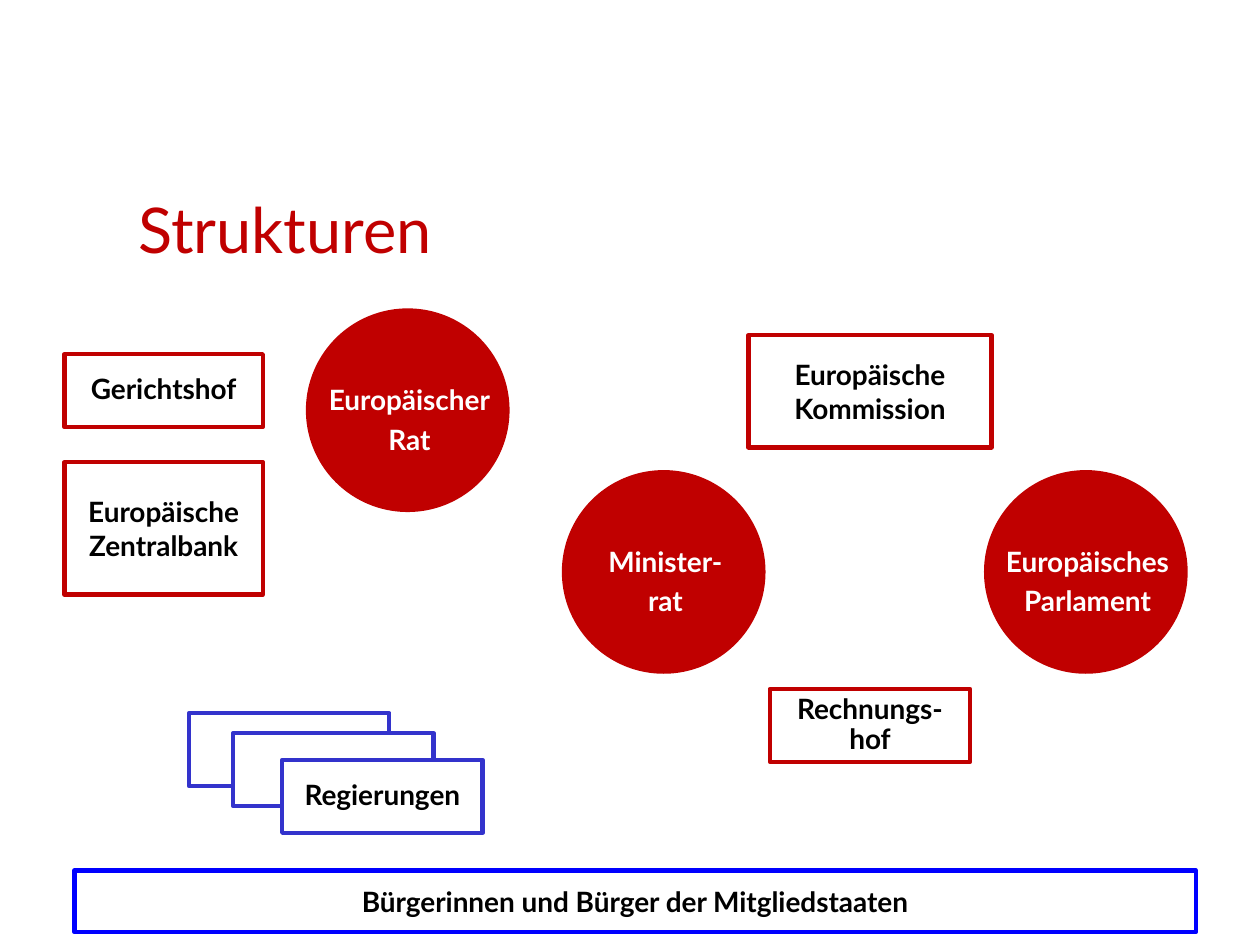
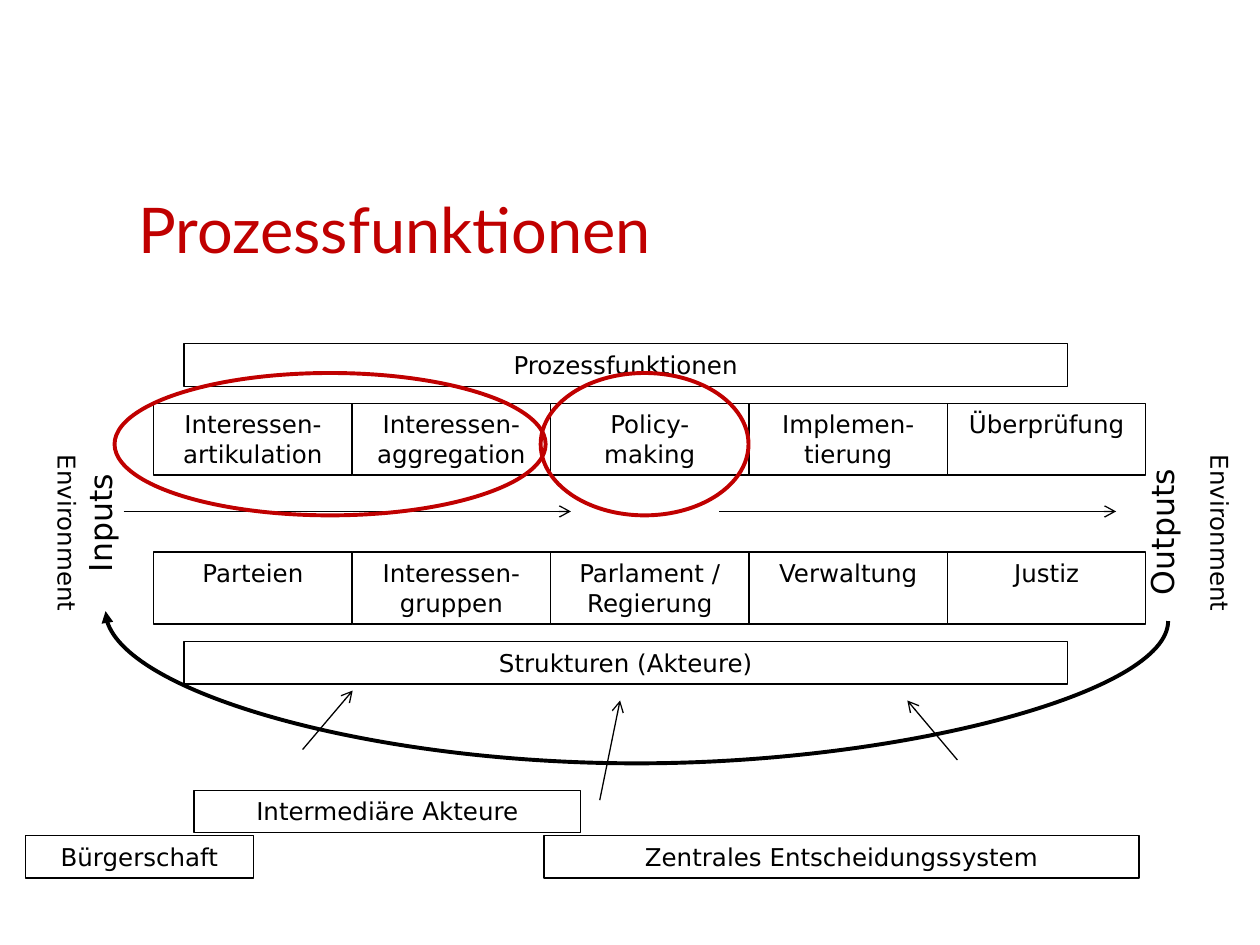
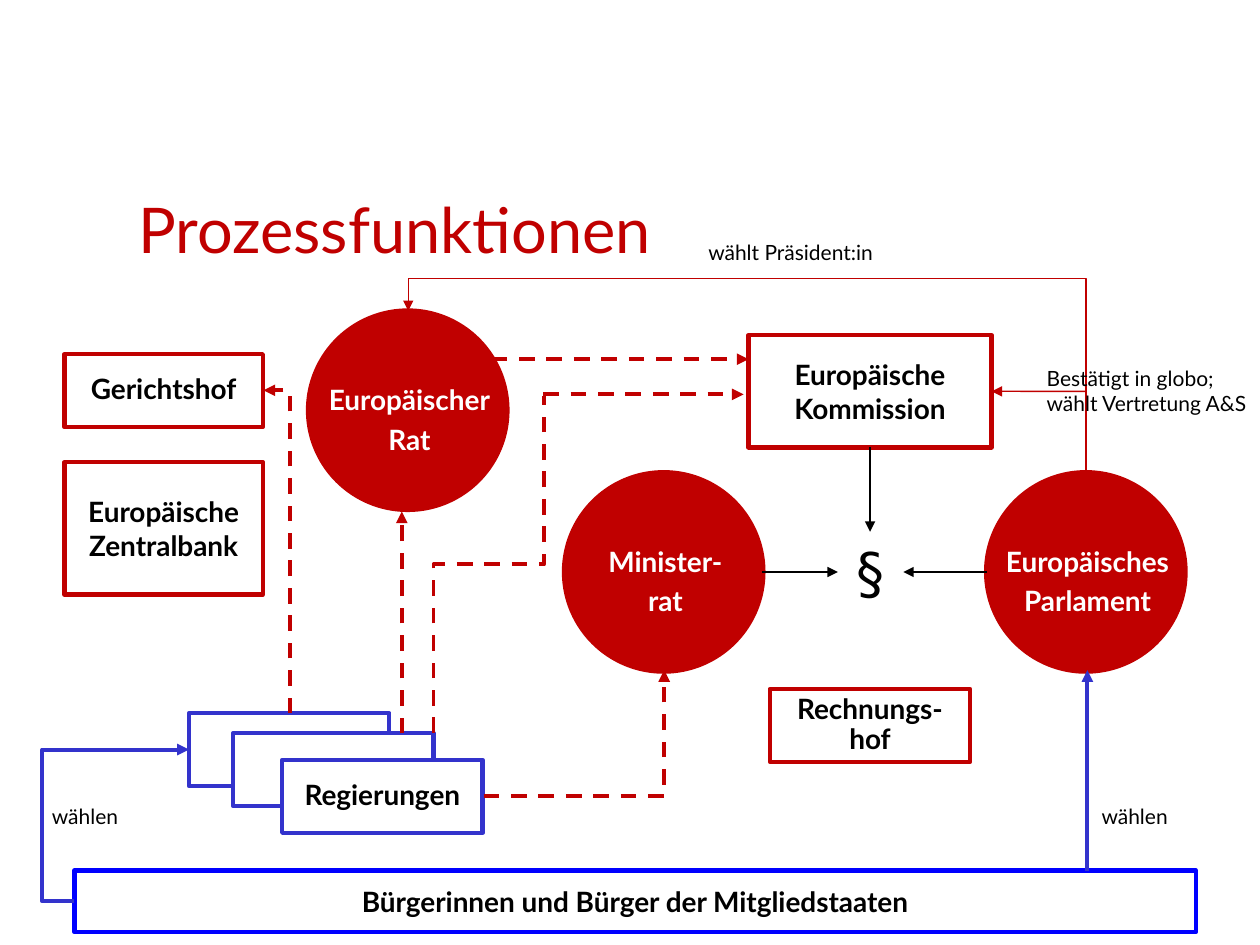
from dataclasses import dataclass

from pptx import Presentation
from pptx.dml.color import RGBColor
from pptx.enum.dml import MSO_LINE
from pptx.enum.shapes import MSO_CONNECTOR as Link, MSO_SHAPE as Preset
from pptx.enum.text import MSO_ANCHOR as Anchor, PP_ALIGN as Align
from pptx.oxml import parse_xml
from pptx.oxml.ns import nsdecls, qn
from pptx.shapes.autoshape import Shape
from pptx.shapes.connector import Connector
from pptx.slide import Slide
from pptx.util import Cm, Pt

RED, BLUE, PURE_BLUE = "C00000", "3333CC", "0000FF"
BLACK, WHITE = "000000", "FFFFFF"
LATO, DEJAVU = "Lato", "DejaVu Sans"
CIRCLE = 4.0  # diameter of an institution's circle, cm
Point = tuple[float, float]


# Descriptions of the repeated elements, lengths in cm
@dataclass
class Box:
    x: float
    y: float
    w: float
    h: float
    text: str = ""
    line: str = BLACK
    spacing: float = 1.0
    fill: str | None = None


@dataclass
class Circle:
    x: float
    y: float
    text: str


@dataclass
class Note:
    x: float
    y: float
    w: float
    h: float
    text: str
    size: float = 12
    font: str = LATO
    align: Align = Align.CENTER
    vert: str | None = None  # direction of text in a box turned upside down


@dataclass
class Arrow:
    start: Point
    end: Point
    color: str = BLACK
    width: float = 0.75
    dashed: bool = False
    head: str | None = "triangle"


@dataclass
class Bend:
    arrow: Arrow
    preset: str
    turn: int = 0
    adj: float | None = None


# Formatting helpers
def rgb(value: str) -> RGBColor:
    return RGBColor.from_string(value)


def write(s: Shape, text: str, *, size: float, font: str = LATO, color: str = BLACK,
          bold: bool = False, align: Align = Align.CENTER, anchor: Anchor = Anchor.TOP,
          spacing: float = 1.0, before: float = 0) -> None:
    tf = s.text_frame
    tf.word_wrap = True
    tf.vertical_anchor = anchor
    for i, line in enumerate(text.split("\n")):
        p = tf.add_paragraph() if i else tf.paragraphs[0]
        p.text = line
        p.alignment = align
        p.line_spacing = spacing
        if i and before:
            p.space_before = Pt(before)
        for r in p.runs:
            r.font.name, r.font.size, r.font.bold = font, Pt(size), bold
            r.font.color.rgb = rgb(color)


def add_outline(slide: Slide, preset: Preset, x: float, y: float, w: float, h: float,
                line: str, width: float, fill: str | None = None) -> Shape:
    s = slide.shapes.add_shape(preset, Cm(x), Cm(y), Cm(w), Cm(h))
    s.shadow.inherit = False
    if fill:
        s.fill.solid()
        s.fill.fore_color.rgb = rgb(fill)
    else:
        s.fill.background()
    s.line.color.rgb = rgb(line)
    s.line.width = Pt(width)
    return s


def add_institution(slide: Slide, b: Box) -> Shape:
    s = add_outline(slide, Preset.RECTANGLE, b.x, b.y, b.w, b.h, b.line, 2.5, b.fill)
    if b.text:
        write(s, b.text, size=16, bold=True, anchor=Anchor.MIDDLE, spacing=b.spacing)
    return s


def add_cell(slide: Slide, b: Box) -> None:
    s = add_outline(slide, Preset.RECTANGLE, b.x, b.y, b.w, b.h, b.line, 0.75)
    write(s, b.text, size=14, font=DEJAVU)


def add_circle(slide: Slide, c: Circle) -> None:
    add_outline(slide, Preset.OVAL, c.x, c.y, CIRCLE, CIRCLE, RED, 3, RED)
    label = slide.shapes.add_textbox(Cm(c.x - 1.14), Cm(c.y + 1.45), Cm(6.35), Cm(1.47))
    write(label, c.text, size=16, color=WHITE, bold=True, anchor=Anchor.MIDDLE, before=3.2)


def add_note(slide: Slide, n: Note) -> None:
    s = slide.shapes.add_textbox(Cm(n.x), Cm(n.y), Cm(n.w), Cm(n.h))
    write(s, n.text, size=n.size, font=n.font, align=n.align)
    if n.vert:
        s.rotation = 180
        s.text_frame._txBody.bodyPr.set("vert", n.vert)


def style_line(c: Connector, a: Arrow) -> None:
    c.line.color.rgb = rgb(a.color)
    c.line.width = Pt(a.width)
    if a.dashed:
        c.line.dash_style = MSO_LINE.DASH
    if a.head:
        ln = c.line._get_or_add_ln()
        ln.append(parse_xml(f'<a:tailEnd {nsdecls("a")} type="{a.head}"/>'))
    c.element.spPr.append(parse_xml(f'<a:effectLst {nsdecls("a")}/>'))


def add_arrow(slide: Slide, a: Arrow) -> Connector:
    c = slide.shapes.add_connector(Link.STRAIGHT, *map(Cm, a.start + a.end))
    style_line(c, a)
    return c


def add_bend(slide: Slide, b: Bend) -> None:
    """Draw an elbow or curve whose frame is turned in quarter steps."""
    (x1, y1), (x2, y2) = b.arrow.start, b.arrow.end
    dx, dy = x2 - x1, y2 - y1
    along, across = {0: (dx, dy), 90: (dy, -dx), 180: (-dx, -dy), 270: (-dy, dx)}[b.turn]
    w, h = abs(along), abs(across)
    x, y = (x1 + x2 - w) / 2, (y1 + y2 - h) / 2
    c = slide.shapes.add_connector(Link.ELBOW, Cm(x), Cm(y), Cm(x + w), Cm(y + h))
    xfrm = c.element.spPr.find(qn("a:xfrm"))
    xfrm.set("rot", str(b.turn * 60000))
    xfrm.set("flipH", str(int(along < 0)))
    xfrm.set("flipV", str(int(across < 0)))
    geom = c.element.spPr.find(qn("a:prstGeom"))
    geom.set("prst", b.preset)
    if b.adj is not None:
        geom.get_or_add_avLst().append(parse_xml(
            f'<a:gd {nsdecls("a")} name="adj1" fmla="val {round(b.adj * 100000)}"/>'))
    style_line(c, b.arrow)


def add_slide(prs: Presentation, title: str) -> Slide:
    slide = prs.slides.add_slide(prs.slide_layouts[5])
    s = slide.shapes.title
    s.left, s.top, s.width, s.height = Cm(2.54), Cm(2.31), Cm(20.32), Cm(3.18)
    write(s, title, size=36, color=RED, align=Align.LEFT, anchor=Anchor.BOTTOM)
    return slide


# Institutions of the union, shared by two slides
COMMISSION = Box(15.09, 6.76, 4.9, 2.26, "Europäische Kommission", RED)
INSTITUTIONS = [
    Box(1.3, 7.14, 4, 1.47, "Gerichtshof", RED, 0.9),
    Box(15.52, 13.89, 4.04, 1.47, "Rechnungs-hof", RED, 0.9),
    Box(1.3, 9.32, 4, 2.67, "Europäische Zentralbank", RED),
    Box(1.5, 17.55, 22.61, 1.24, "Bürgerinnen und Bürger der Mitgliedstaaten", PURE_BLUE),
    Box(3.81, 14.38, 4.04, 1.47, line=BLUE),
    Box(4.7, 14.78, 4.04, 1.47, line=BLUE, fill=WHITE),
    Box(5.69, 15.32, 4.04, 1.47, "Regierungen", BLUE, 0.9, WHITE),
]
CIRCLES = [
    Circle(6.22, 6.27, "Europäischer\nRat"),
    Circle(11.38, 9.53, "Minister-\nrat"),
    Circle(19.89, 9.53, "Europäisches\nParlament"),
]


def add_structure(slide: Slide) -> Shape:
    """Draw all institutions and return the commission's box."""
    for circle in CIRCLES:
        add_circle(slide, circle)
    for box in INSTITUTIONS:
        add_institution(slide, box)
    return add_institution(slide, COMMISSION)


# Process functions and the actors who fulfil them
CELL_X, CELL_W, CELL_H = 3.1, 4.0, 1.45
CELL_ROWS = {
    8.13: ["Interessen-artikulation", "Interessen-aggregation", "Policy-\vmaking",
           "Implemen-tierung", "Überprüfung"],
    11.13: ["Parteien", "Interessen-gruppen", "Parlament / Regierung",
            "Verwaltung", "Justiz"],
}
BARS = [
    Box(3.71, 6.93, 17.81, 0.86, "Prozessfunktionen"),
    Box(3.71, 12.93, 17.81, 0.86, "Strukturen (Akteure)"),
    Box(0.51, 16.84, 4.6, 0.86, "Bürgerschaft"),
    Box(3.91, 15.93, 7.8, 0.86, "Intermediäre Akteure"),
    Box(10.97, 16.84, 11.99, 0.86, "Zentrales Entscheidungssystem"),
]
SIDE_NOTES = [
    Note(22.91, 8.92, 1.27, 3.61, "Outputs", 18, DEJAVU, vert="vert"),
    Note(1.5, 8.74, 1.27, 3.61, "Inputs", 18, DEJAVU, vert="vert"),
    Note(0.66, 8.74, 1.12, 4.01, "Environment", 14, DEJAVU, vert="vert270"),
    Note(23.9, 8.74, 1.12, 4.01, "Environment", 14, DEJAVU, vert="vert270"),
]
FLOW_ARROWS = [
    Arrow((2.49, 10.31), (11.51, 10.31), head="arrow"),
    Arrow((14.5, 10.31), (22.5, 10.31), head="arrow"),
    Arrow((19.3, 15.32), (18.29, 14.12), head="arrow"),
    Arrow((12.09, 16.13), (12.5, 14.12), head="arrow"),
    Arrow((6.1, 15.11), (7.11, 13.92), head="arrow"),
]
FEEDBACK = Bend(Arrow((23.55, 12.52), (2.13, 12.32), width=2.25),
                "curvedConnector3", 90, -14.34)


def add_process(slide: Slide) -> None:
    add_bend(slide, FEEDBACK)
    for note in SIDE_NOTES:
        add_note(slide, note)
    for y, texts in CELL_ROWS.items():
        for i, text in enumerate(texts):
            add_cell(slide, Box(CELL_X + i * CELL_W, y, CELL_W, CELL_H, text))
    for bar in BARS:
        add_cell(slide, bar)
    for arrow in FLOW_ARROWS:
        add_arrow(slide, arrow)
    for x, w in [(2.31, 8.69), (10.9, 4.19)]:
        add_outline(slide, Preset.OVAL, x, 7.52, w, 2.87, RED, 2.25)


# Relations between the institutions
BENDS = [
    Bend(Arrow((1.5, 18.17), (3.81, 15.11), BLUE, 2.25), "bentConnector3", 180, -0.28),
    Bend(Arrow((21.89, 9.53), (8.23, 6.27), RED), "bentConnector3", 270, 1.2),
    Bend(Arrow((9.75, 16.05), (13.39, 13.51), RED, 2.25, True), "bentConnector2"),
    Bend(Arrow((8.74, 14.78), (10.97, 7.98), RED, 2.25, True, None),
         "bentConnector3", 90, 0.5),
    Bend(Arrow((5.84, 14.38), (5.31, 7.87), RED, 2.25, True), "bentConnector2", 270),
]
ARROWS = [
    Arrow((8.1, 14.78), (8.1, 10.31), RED, 2.25, True),
    Arrow((10.95, 7.95), (14.99, 7.95), RED, 2.25, True),
    Arrow((9.91, 7.24), (15.09, 7.24), RED, 2.25, True),
    Arrow((21.92, 17.55), (21.92, 13.51), BLUE, 2.25),
    Arrow((15.37, 11.53), (16.89, 11.53)),
    Arrow((19.89, 11.53), (18.21, 11.53)),
]
CONFIRMATION = Arrow((21.89, 7.89), (19.99, 7.89), RED)
PROPOSAL = Arrow((17.54, 9.02), (17.54, 10.72))
NOTES = [
    Note(0.71, 16.08, 2.01, 0.76, "wählen"),
    Note(21.87, 16.08, 2.01, 0.76, "wählen"),
    Note(13.59, 4.7, 4.7, 0.76, "wählt Präsident:in"),
    Note(20.85, 7.24, 4.7, 1.27, "Bestätigt in globo;\nwählt Vertretung A&S",
         align=Align.LEFT),
    Note(16.33, 10.72, 2.44, 1.63, "§", 32, DEJAVU),
]


def add_relations(slide: Slide, commission: Shape) -> None:
    for bend in BENDS:
        add_bend(slide, bend)
    for arrow in ARROWS:
        add_arrow(slide, arrow)
    add_arrow(slide, CONFIRMATION).end_connect(commission, 3)
    add_arrow(slide, PROPOSAL).begin_connect(commission, 2)
    for note in NOTES:
        add_note(slide, note)


def main() -> None:
    prs = Presentation()
    prs.slide_width, prs.slide_height = Cm(25.4), Cm(19.05)
    add_structure(add_slide(prs, "Strukturen"))
    add_process(add_slide(prs, "Prozessfunktionen"))
    slide = add_slide(prs, "Prozessfunktionen")
    add_relations(slide, add_structure(slide))
    prs.save("out.pptx")


if __name__ == "__main__":
    main()
